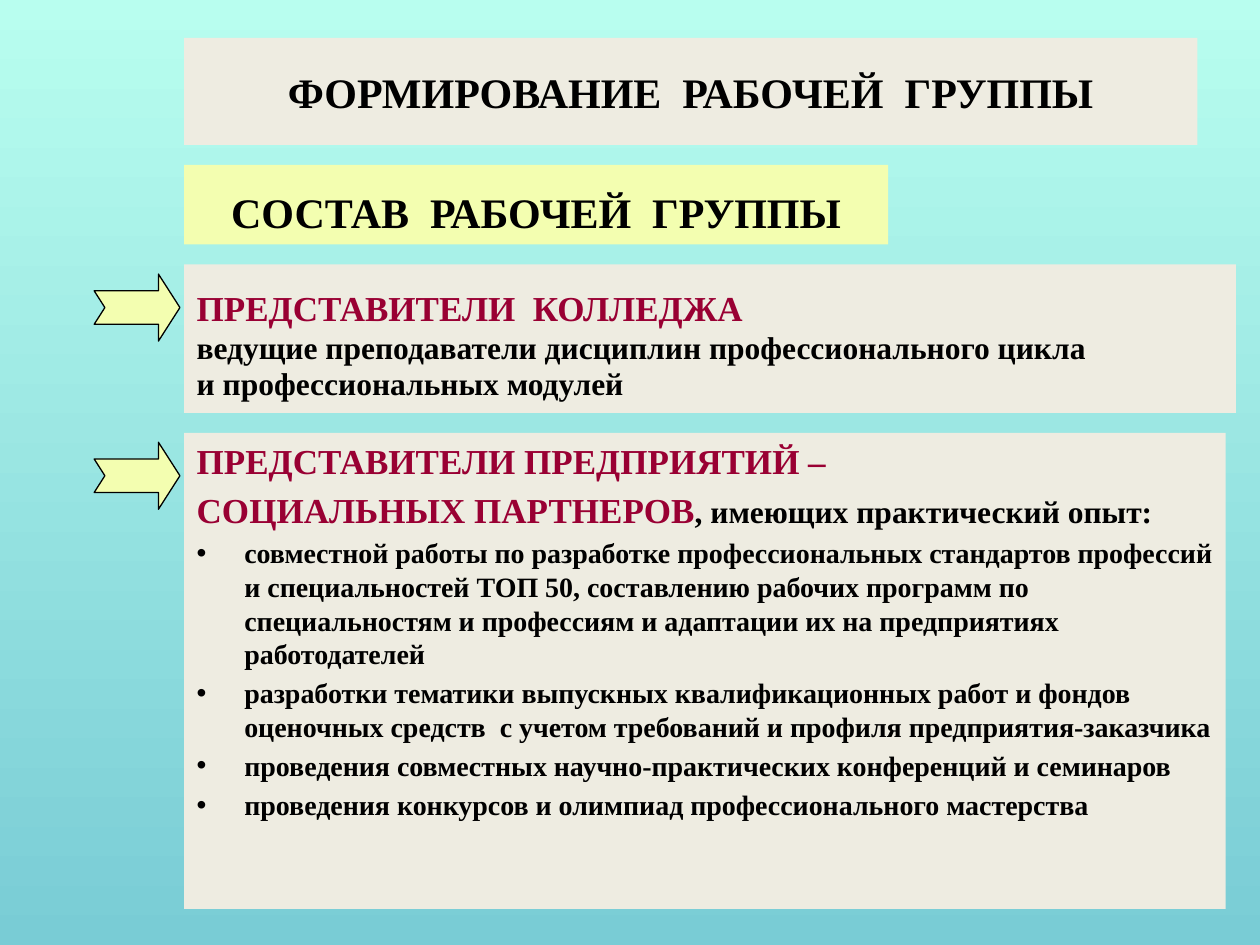
from dataclasses import dataclass

from lxml import etree
from pptx import Presentation
from pptx.dml.color import RGBColor
from pptx.enum.shapes import MSO_SHAPE
from pptx.enum.text import MSO_ANCHOR, MSO_AUTO_SIZE, PP_ALIGN
from pptx.oxml.ns import qn
from pptx.util import Pt

TOP, MIDDLE = MSO_ANCHOR.TOP, MSO_ANCHOR.MIDDLE
LEFT, CENTER = PP_ALIGN.LEFT, PP_ALIGN.CENTER
NO_AUTOFIT = MSO_AUTO_SIZE.NONE
NOTCHED_ARROW = MSO_SHAPE.NOTCHED_RIGHT_ARROW

FONT = "Times New Roman"
COLORS = {
    "sky_top": "B8FEEF", "sky_bottom": "79CCD5",
    "panel": "EEECE1", "accent": "F3FEB0",
    "heading": "990033", "text": "000000",
}
PANEL_LEFT = 105.2
HANGING = 27.2
LOWERED = 17.6  # top inset of the panels whose text starts lower
ARROW_TOPS = (156.6, 252.7)


@dataclass
class Span:
    text: str
    size: float
    color: str = "text"


@dataclass
class Line:
    spans: list[Span]
    bullet: bool = False


@dataclass
class Panel:
    top: float
    width: float
    height: float
    lines: list[Line]
    fill: str = "panel"
    align: PP_ALIGN = LEFT
    anchor: MSO_ANCHOR = TOP
    inset_top: float = 3.6
    spacing: float = 1.0
    hanging: float = 0


def rgb(name: str) -> RGBColor:
    return RGBColor.from_string(COLORS[name])


def set_marker(p, hanging: float, bullet: bool) -> None:
    """Set the hanging indent and the bullet of a paragraph."""
    pPr = p._p.get_or_add_pPr()
    pPr.set("marL", str(Pt(hanging)))
    pPr.set("indent", str(-Pt(hanging)))
    if bullet:
        etree.SubElement(pPr, qn("a:buChar")).set("char", "•")
    else:
        etree.SubElement(pPr, qn("a:buNone"))


def fill_panel(sp, panel: Panel) -> None:
    """Place a text shape and write its formatted lines."""
    sp.left, sp.top = Pt(PANEL_LEFT), Pt(panel.top)
    sp.width, sp.height = Pt(panel.width), Pt(panel.height)
    sp.fill.solid()
    sp.fill.fore_color.rgb = rgb(panel.fill)
    tf = sp.text_frame
    tf.word_wrap = True
    tf.auto_size = NO_AUTOFIT
    tf.vertical_anchor = panel.anchor
    tf.margin_left = tf.margin_right = Pt(7.2)
    tf.margin_top, tf.margin_bottom = Pt(panel.inset_top), Pt(3.6)
    for i, line in enumerate(panel.lines):
        p = tf.add_paragraph() if i else tf.paragraphs[0]
        p.alignment = panel.align
        p.line_spacing = panel.spacing
        p.space_before = Pt(0.2 * line.spans[0].size)
        set_marker(p, panel.hanging, line.bullet)
        for span in line.spans:
            r = p.add_run()
            r.text = span.text
            r.font.name, r.font.size, r.font.bold = FONT, Pt(span.size), True
            r.font.color.rgb = rgb(span.color)


def add_arrow(shapes, top: float) -> None:
    sp = shapes.add_shape(NOTCHED_ARROW, Pt(53.8), Pt(top), Pt(49), Pt(38.3))
    sp.adjustments[0], sp.adjustments[1] = 0.5, 0.32
    sp.shadow.inherit = False
    sp.fill.solid()
    sp.fill.fore_color.rgb = rgb("accent")
    sp.line.color.rgb = rgb("text")
    sp.line.width = Pt(0.75)


TITLE = Panel(21.6, 579, 61.2, [Line([Span("ФОРМИРОВАНИЕ  РАБОЧЕЙ  ГРУППЫ", 24)])],
              align=CENTER, anchor=MIDDLE)
SUBTITLE = Panel(94.3, 402.3, 45.4, [Line([Span("СОСТАВ  РАБОЧЕЙ  ГРУППЫ", 24)])],
                 fill="accent", align=CENTER, inset_top=LOWERED, spacing=0.8)
COLLEGE = Panel(151, 601, 85, [
    Line([Span("ПРЕДСТАВИТЕЛИ  КОЛЛЕДЖА", 20, "heading")]),
    Line([Span("ведущие преподаватели дисциплин профессионального цикла", 18)]),
    Line([Span("и профессиональных модулей", 18)]),
], inset_top=LOWERED, spacing=0.8, hanging=HANGING)
EXPERIENCE = (
    "совместной работы по разработке профессиональных стандартов профессий "
    "и специальностей ТОП 50, составлению рабочих программ по специальностям "
    "и профессиям и адаптации их на предприятиях работодателей",
    "разработки тематики выпускных квалификационных работ и фондов оценочных "
    "средств  с учетом требований и профиля предприятия-заказчика",
    "проведения совместных научно-практических конференций и семинаров",
    "проведения конкурсов и олимпиад профессионального мастерства",
)
PARTNERS = Panel(247.4, 595.2, 272, [
    Line([Span("ПРЕДСТАВИТЕЛИ ПРЕДПРИЯТИЙ –", 20, "heading")]),
    Line([Span("СОЦИАЛЬНЫХ ПАРТНЕРОВ", 20, "heading"),
          Span(", имеющих практический опыт:", 18)]),
    *(Line([Span(text, 16)], bullet=True) for text in EXPERIENCE),
], hanging=HANGING)


def main() -> None:
    prs = Presentation()
    prs.slide_width, prs.slide_height = Pt(720), Pt(540)
    s = prs.slides.add_slide(prs.slide_layouts[3])  # title and two lists

    # Background gradient, top to bottom
    bg = s.background.fill
    bg.gradient()
    bg.gradient_angle = 270
    for stop, name in zip(bg.gradient_stops, ("sky_top", "sky_bottom")):
        stop.color.rgb = rgb(name)

    # Title and the two lists
    for sp, panel in zip(s.placeholders, (TITLE, COLLEGE, PARTNERS)):
        fill_panel(sp, panel)

    # Subtitle and arrows
    fill_panel(s.shapes.add_textbox(0, 0, 0, 0), SUBTITLE)
    for top in ARROW_TOPS:
        add_arrow(s.shapes, top)

    prs.save("out.pptx")


if __name__ == "__main__":
    main()
